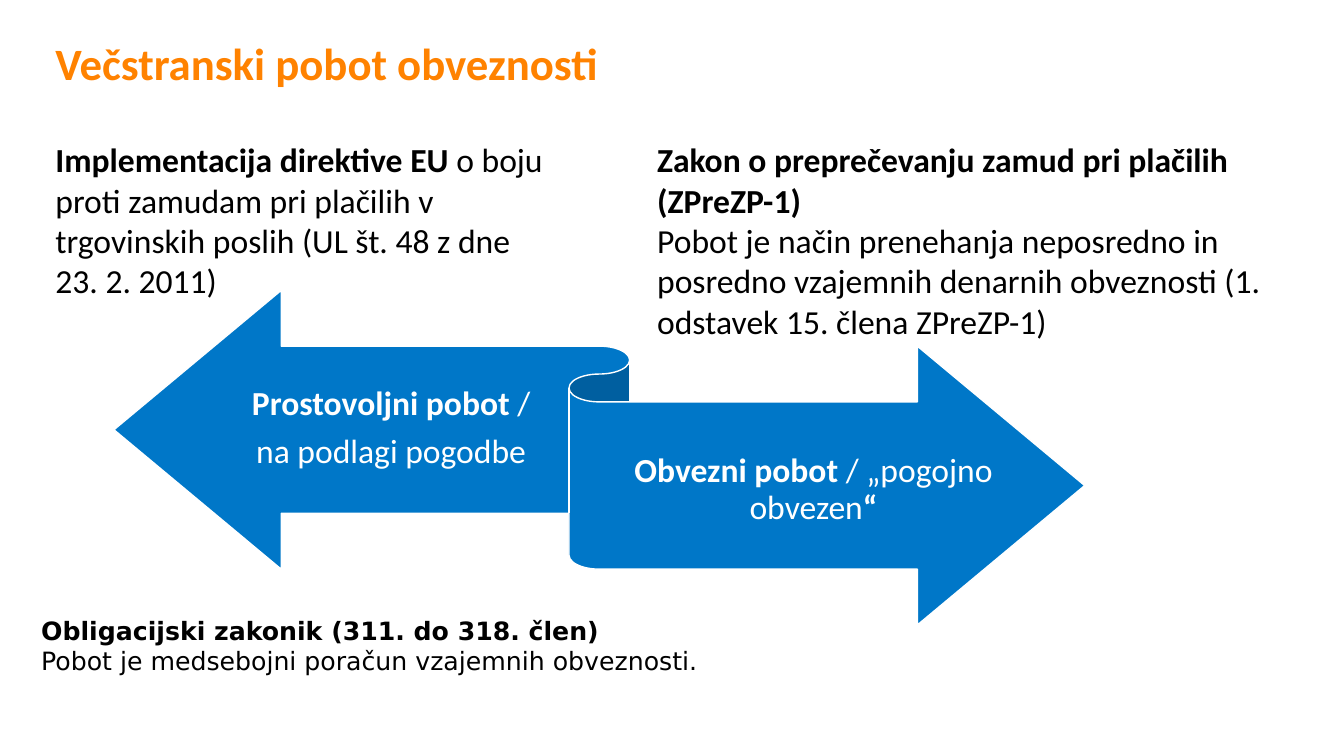
from pptx import Presentation
from pptx import util as u
from pptx.dml import color
from pptx.enum import shapes, text
from pptx.oxml import xmlchemy

BLUE, ORANGE, WHITE, BLACK = "0077C8", "FF8200", "FFFFFF", "000000"


def rgb(hex_string):
    """Turn a hex string into a colour."""
    return color.RGBColor.from_string(hex_string)


def place(shape, box):
    """Move a shape to a box of left, top, width and height in points."""
    shape.left, shape.top, shape.width, shape.height = map(u.Pt, box)


def write(shape, paragraphs, size, hex_color, font="Calibri", align=text.PP_ALIGN.LEFT,
          anchor=text.MSO_ANCHOR.TOP, spacing=1.0, after=0):
    """Fill a shape with paragraphs, each a list of (words, bold) runs."""
    frame = shape.text_frame
    frame.word_wrap = True
    frame.auto_size = text.MSO_AUTO_SIZE.NONE
    frame.vertical_anchor = anchor
    for number, runs in enumerate(paragraphs):
        paragraph = frame.add_paragraph() if number else frame.paragraphs[0]
        properties = paragraph._p.get_or_add_pPr()
        properties.set("marL", "0")
        properties.set("indent", "0")
        paragraph.alignment = align
        paragraph.line_spacing = spacing
        paragraph.space_before = u.Pt(0)
        paragraph.space_after = u.Pt(after)
        properties.append(xmlchemy.OxmlElement("a:buNone"))
        for words, bold in runs:
            run = paragraph.add_run()
            run.text = words
            run.font.name = font
            run.font.size = u.Pt(size)
            run.font.bold = bold
            run.font.color.rgb = rgb(hex_color)


def add_title(slide, box):
    """Write the slide title."""
    title = slide.shapes.title
    place(title, box)
    write(title, [[("Večstranski pobot obveznosti", True)]], 32, ORANGE,
          anchor=text.MSO_ANCHOR.BOTTOM, spacing=0.9)


def add_column(placeholder, box, paragraphs):
    """Write one column about the legal basis."""
    place(placeholder, box)
    write(placeholder, paragraphs, 24, BLACK)


def add_ribbon(slide, box):
    """Draw the two-way ribbon with a label on each arrow."""
    left, top, width, height = box
    ribbon = slide.shapes.add_shape(shapes.MSO_SHAPE.LEFT_RIGHT_RIBBON, *map(u.Pt, box))
    ribbon.shadow.inherit = False
    ribbon.fill.solid()
    ribbon.fill.fore_color.rgb = rgb(BLUE)
    ribbon.line.color.rgb = rgb(WHITE)
    ribbon.line.width = u.Pt(1)
    voluntary = [[("Prostovoljni pobot ", True), ("/", False)],
                 [("na podlagi pogodbe", False)]]
    mandatory = [[("Obvezni pobot ", True), ("/ „pogojno obvezen", False), ("“", True)]]
    labels = [(63.4, 40.3, 269.3, 117.4, voluntary), (344.9, 96.5, 309.6, 92.9, mandatory)]
    for dx, dy, label_width, label_height, paragraphs in labels:
        label = slide.shapes.add_textbox(
            *map(u.Pt, (left + dx, top + dy, label_width, label_height)))
        frame = label.text_frame
        frame.margin_left = frame.margin_right = 0
        frame.margin_top, frame.margin_bottom = u.Pt(6.5), u.Pt(7)
        write(label, paragraphs, 24, WHITE, align=text.PP_ALIGN.CENTER,
              anchor=text.MSO_ANCHOR.MIDDLE, spacing=0.9, after=8.4)


def add_code_note(slide, box):
    """Write the note about the code of obligations."""
    note = slide.shapes.add_textbox(*map(u.Pt, box))
    write(note, [[("Obligacijski zakonik (311. do 318. člen)", True)],
                 [("Pobot je medsebojni poračun vzajemnih obveznosti.", False)]],
          18, BLACK, font="DejaVu Sans")


def main():
    """Build the slide and save it."""
    presentation = Presentation()
    presentation.slide_width, presentation.slide_height = u.Pt(960), u.Pt(540)
    slide = presentation.slides.add_slide(presentation.slide_layouts[3])
    add_title(slide, (32.4, 32.4, 902, 36))
    add_ribbon(slide, (81.4, 207.4, 693.4, 239))
    add_column(slide.placeholders[1], (32.4, 95.8, 368, 157.7), [
        [("Implementacija direktive EU ", True),
         ("o boju proti zamudam pri plačilih v trgovinskih poslih "
          "(UL št. 48 z dne 23. 2. 2011)", False)]])
    add_column(slide.placeholders[2], (462.2, 95.8, 447.1, 152.6), [
        [("Zakon o preprečevanju zamud pri plačilih (ZPreZP-1)", True)],
        [("Pobot je način prenehanja neposredno in posredno vzajemnih denarnih "
          "obveznosti (1. odstavek 15. člena ZPreZP-1)", False)]])
    add_code_note(slide, (22.3, 435.6, 505.4, 51.1))
    presentation.save("out.pptx")


if __name__ == "__main__":
    main()
